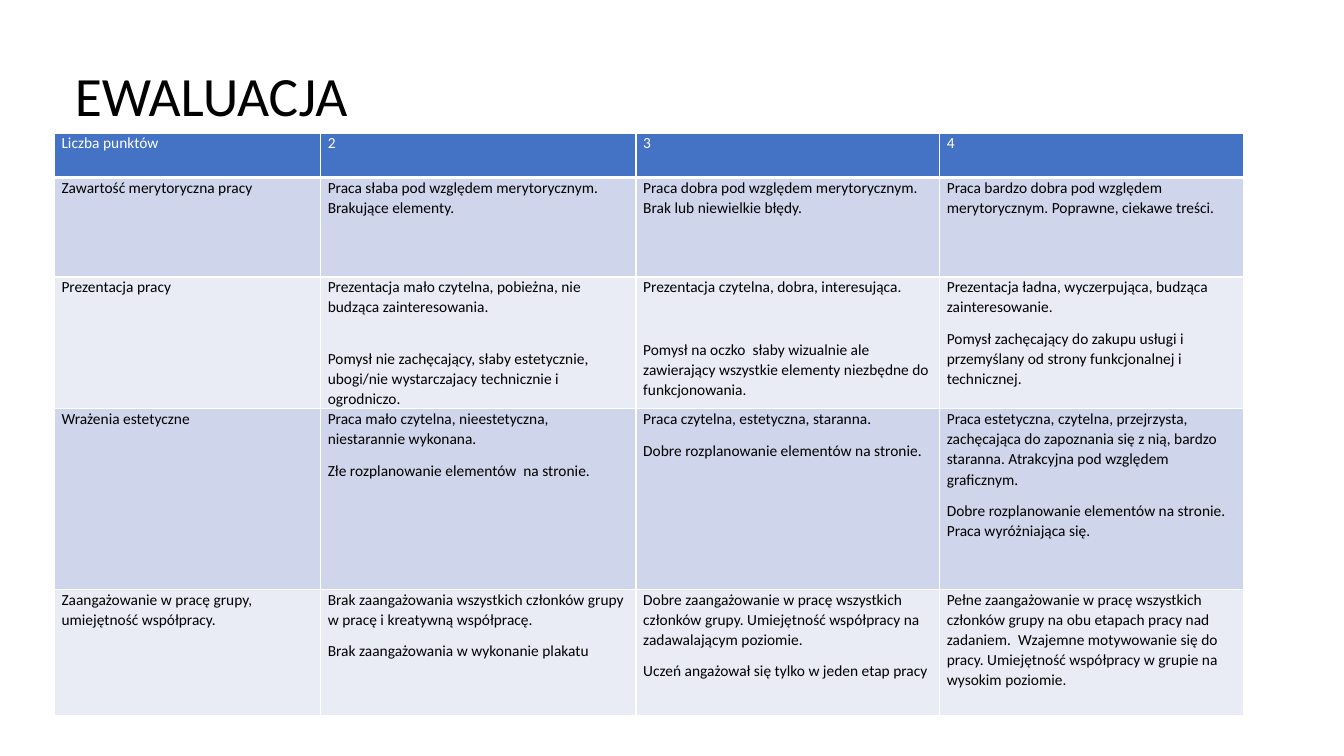
from pptx import Presentation
from pptx.dml.color import RGBColor
from pptx.enum.text import MSO_ANCHOR as ANCHOR, MSO_AUTO_SIZE as AUTO, PP_ALIGN as ALIGN
from pptx.oxml import parse_xml
from pptx.oxml.ns import nsdecls
from pptx.util import Cm, Pt

FONT = "Calibri"
BLACK, WHITE, HEADER = "000000", "FFFFFF", "4472C4"
BANDS = ["E9EBF5", "CFD5EA"]
COLS = [6.71, 7.95, 7.65, 7.65]
ROWS = [1.12, 2.51, 3.18, 4.55, 3.18]
GAP = 8
WIDE_GAPS = {(2, 1): 22.3, (2, 2): 30.3}
RUBRIC = [
    ["Liczba punktów", "2", "3", "4"],
    [
        "Zawartość merytoryczna pracy",
        "Praca słaba pod względem merytorycznym. Brakujące elementy.",
        "Praca dobra pod względem merytorycznym. Brak lub niewielkie błędy.",
        "Praca bardzo dobra pod względem merytorycznym. Poprawne, ciekawe treści.",
    ],
    [
        "Prezentacja pracy",
        "Prezentacja mało czytelna, pobieżna, nie budząca zainteresowania.\n"
        "Pomysł nie zachęcający, słaby estetycznie, ubogi/nie wystarczajacy "
        "technicznie i ogrodniczo.",
        "Prezentacja czytelna, dobra, interesująca.\n"
        "Pomysł na oczko  słaby wizualnie ale zawierający wszystkie elementy "
        "niezbędne do funkcjonowania.",
        "Prezentacja ładna, wyczerpująca, budząca zainteresowanie.\n"
        "Pomysł zachęcający do zakupu usługi i przemyślany od strony "
        "funkcjonalnej i technicznej.",
    ],
    [
        "Wrażenia estetyczne",
        "Praca mało czytelna, nieestetyczna, niestarannie wykonana.\n"
        "Złe rozplanowanie elementów  na stronie.",
        "Praca czytelna, estetyczna, staranna.\n"
        "Dobre rozplanowanie elementów na stronie.",
        "Praca estetyczna, czytelna, przejrzysta, zachęcająca do zapoznania się "
        "z nią, bardzo staranna. Atrakcyjna pod względem graficznym.\n"
        "Dobre rozplanowanie elementów na stronie. Praca wyróżniająca się.",
    ],
    [
        "Zaangażowanie w pracę grupy, umiejętność współpracy.",
        "Brak zaangażowania wszystkich członków grupy w pracę i kreatywną współpracę.\n"
        "Brak zaangażowania w wykonanie plakatu",
        "Dobre zaangażowanie w pracę wszystkich członków grupy. Umiejętność "
        "współpracy na zadawalającym poziomie.\n"
        "Uczeń angażował się tylko w jeden etap pracy",
        "Pełne zaangażowanie w pracę wszystkich członków grupy na obu etapach "
        "pracy nad zadaniem.  Wzajemne motywowanie się do pracy. Umiejętność "
        "współpracy w grupie na wysokim poziomie.",
    ],
]


def rgb(color):
    return RGBColor.from_string(color)


def set_attrs(obj, **values):
    for name, value in values.items():
        setattr(obj, name, value)


def add_text(p, text, size, color, **para):
    r = p.add_run()
    r.text = text
    set_attrs(r.font, name=FONT, size=Pt(size), bold=False)
    r.font.color.rgb = rgb(color)
    set_attrs(p, **para)


def add_title(s, text):
    sp = s.shapes.title
    set_attrs(sp, left=Cm(1.63), top=Cm(1.96), width=Cm(30.63), height=Cm(1.07))
    tf = sp.text_frame
    set_attrs(tf, vertical_anchor=ANCHOR.MIDDLE, auto_size=AUTO.NONE, word_wrap=True)
    add_text(tf.paragraphs[0], text, 39.6, BLACK, alignment=ALIGN.LEFT, line_spacing=0.9)


def set_borders(cell, bottom):
    """Draw white lines on all four sides of a table cell."""
    tc_pr = cell._tc.get_or_add_tcPr()
    for side, width in {"L": 1, "R": 1, "T": 1, "B": bottom}.items():
        tc_pr.append(parse_xml(
            f'<a:ln{side} {nsdecls("a")} w="{Pt(width)}"><a:solidFill>'
            f'<a:srgbClr val="{WHITE}"/></a:solidFill></a:ln{side}>'))


def fill_cell(cell, text, fill, color, gap, bottom):
    set_attrs(cell, margin_left=Cm(0.18), margin_right=Cm(0.18),
              margin_top=0, margin_bottom=0)
    set_borders(cell, bottom)
    cell.fill.solid()
    cell.fill.fore_color.rgb = rgb(fill)
    tf = cell.text_frame
    lines = text.split("\n")
    for i, line in enumerate(lines):
        p = tf.add_paragraph() if i else tf.paragraphs[0]
        after = GAP if i == len(lines) - 1 else gap
        add_text(p, line, 11, color, line_spacing=1.06, space_after=Pt(after))


def add_rubric(s):
    table = s.shapes.add_table(len(ROWS), len(COLS), Cm(1.37), Cm(3.35),
                               Cm(sum(COLS)), Cm(sum(ROWS))).table
    for col, width in zip(table.columns, COLS):
        col.width = Cm(width)
    for row, height in zip(table.rows, ROWS):
        row.height = Cm(height)
    for i, texts in enumerate(RUBRIC):
        fill, color, bottom = (BANDS[i % 2], BLACK, 1) if i else (HEADER, WHITE, 3)
        for j, text in enumerate(texts):
            gap = WIDE_GAPS.get((i, j), GAP)
            fill_cell(table.cell(i, j), text, fill, color, gap, bottom)


def main():
    prs = Presentation()
    set_attrs(prs, slide_width=Cm(33.87), slide_height=Cm(19.05))
    s = prs.slides.add_slide(prs.slide_layouts[5])
    add_title(s, "EWALUACJA")
    add_rubric(s)
    prs.save("out.pptx")


if __name__ == "__main__":
    main()
